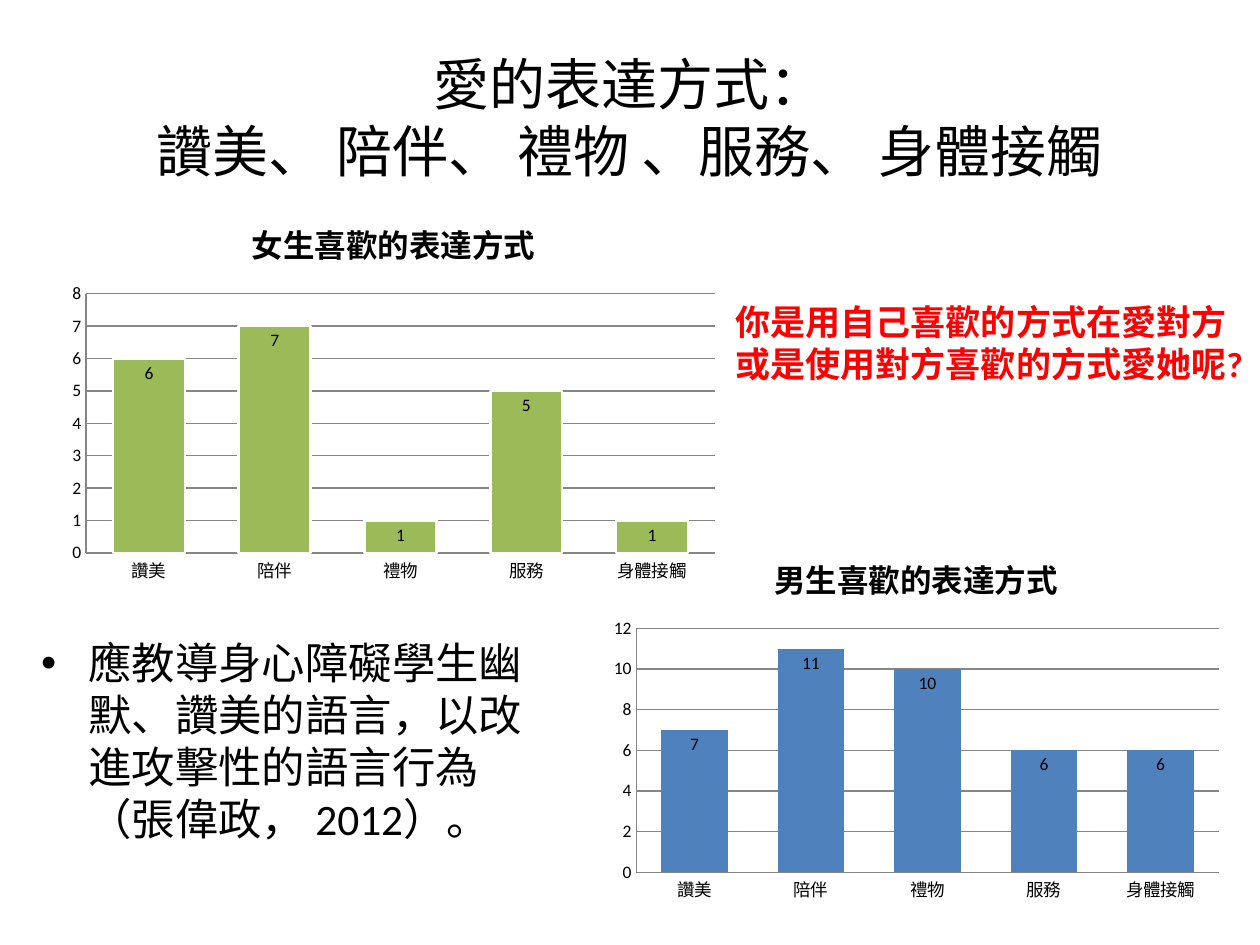
import pptx
import pptx.chart.data
import pptx.dml.color
import pptx.enum.chart
import pptx.enum.text
import pptx.oxml
import pptx.util
from pptx.util import Cm, Pt


def color(hex_string):
    return pptx.dml.color.RGBColor.from_string(hex_string)


def style_text(paragraph, size, hex_string, bold=False):
    paragraph.font.name = "Calibri"
    paragraph.font.size = Pt(size)
    paragraph.font.bold = bold
    paragraph.font.color.rgb = color(hex_string)


presentation = pptx.Presentation()
presentation.slide_width = Cm(25.4)
presentation.slide_height = Cm(19.05)
slide = presentation.slides.add_slide(presentation.slide_layouts[5])

title = slide.shapes.title
title.left, title.top, title.width, title.height = Cm(1.27), Cm(0.76), Cm(22.86), Cm(3.18)
title.text_frame.text = "愛的表達方式：\v讚美、 陪伴、 禮物 、服務、 身體接觸"
title.text_frame.vertical_anchor = pptx.enum.text.MSO_ANCHOR.MIDDLE
title.text_frame.paragraphs[0].alignment = pptx.enum.text.PP_ALIGN.CENTER
style_text(title.text_frame.paragraphs[0], 32, "000000")

categories = ["讚美", "陪伴", "禮物", "服務", "身體接觸"]
charts = [
    ("女生喜歡的表達方式", (6, 7, 1, 5, 1), "9BBB59", "FFFFFF", 8, 1,
     (1.19, 3.96, 13.49, 7.95)),
    ("男生喜歡的表達方式", (7, 11, 10, 6, 6), "4F81BD", None, 12, 2,
     (12.12, 10.72, 12.7, 7.62)),
]
for heading, values, fill, outline, maximum, step, position in charts:
    chart_data = pptx.chart.data.CategoryChartData()
    chart_data.categories = categories
    chart_data.add_series("Series 1", values)
    chart = slide.shapes.add_chart(
        pptx.enum.chart.XL_CHART_TYPE.COLUMN_CLUSTERED,
        *[Cm(length) for length in position], chart_data).chart
    chart.font.name = "Calibri"
    chart.font.size = Pt(10)
    chart.font.color.rgb = color("000000")
    chart.has_legend = False
    chart.has_title = True
    chart.chart_title.text_frame.text = heading
    style_text(chart.chart_title.text_frame.paragraphs[0], 18, "000000", True)

    plot = chart.plots[0]
    plot.vary_by_categories = False
    plot.gap_width = 75
    plot.overlap = 40
    plot.has_data_labels = True
    plot.data_labels.show_value = True
    plot.data_labels.position = pptx.enum.chart.XL_LABEL_POSITION.INSIDE_END
    series = plot.series[0]
    series.format.fill.solid()
    series.format.fill.fore_color.rgb = color(fill)
    if outline:
        series.format.line.color.rgb = color(outline)
        series.format.line.width = Pt(1.5)

    value_axis = chart.value_axis
    value_axis.minimum_scale = 0
    value_axis.maximum_scale = maximum
    value_axis.major_unit = step
    value_axis.has_major_gridlines = True
    value_axis.major_gridlines.format.line.color.rgb = color("868686")
    for axis in (chart.category_axis, value_axis):
        axis.major_tick_mark = pptx.enum.chart.XL_TICK_MARK.NONE
        axis.format.line.color.rgb = color("868686")

question = slide.shapes.add_textbox(Cm(14.58), Cm(5.94), Cm(10.82), Cm(1.96))
question.text_frame.word_wrap = False
question.text_frame.text = "你是用自己喜歡的方式在愛對方\n或是使用對方喜歡的方式愛她呢?"
for paragraph in question.text_frame.paragraphs:
    style_text(paragraph, 20, "FF0000", True)

advice = slide.shapes.add_textbox(Cm(0.58), Cm(12.7), Cm(10.52), Cm(4.57))
advice.text_frame.word_wrap = True
advice.text_frame.text = "應教導身心障礙學生幽默、讚美的語言，以改進攻擊性的語言行為（張偉政， 2012）。"
paragraph = advice.text_frame.paragraphs[0]
properties = paragraph._p.get_or_add_pPr()
properties.set("marL", str(Cm(0.95)))
properties.set("indent", str(-Cm(0.95)))
namespace = 'xmlns:a="http://schemas.openxmlformats.org/drawingml/2006/main"'
for element in ('buFont {} typeface="Arial"', 'buChar {} char="•"'):
    properties.append(pptx.oxml.parse_xml(f"<a:{element.format(namespace)}/>"))
style_text(paragraph, 24.8, "000000")

presentation.save("out.pptx")
